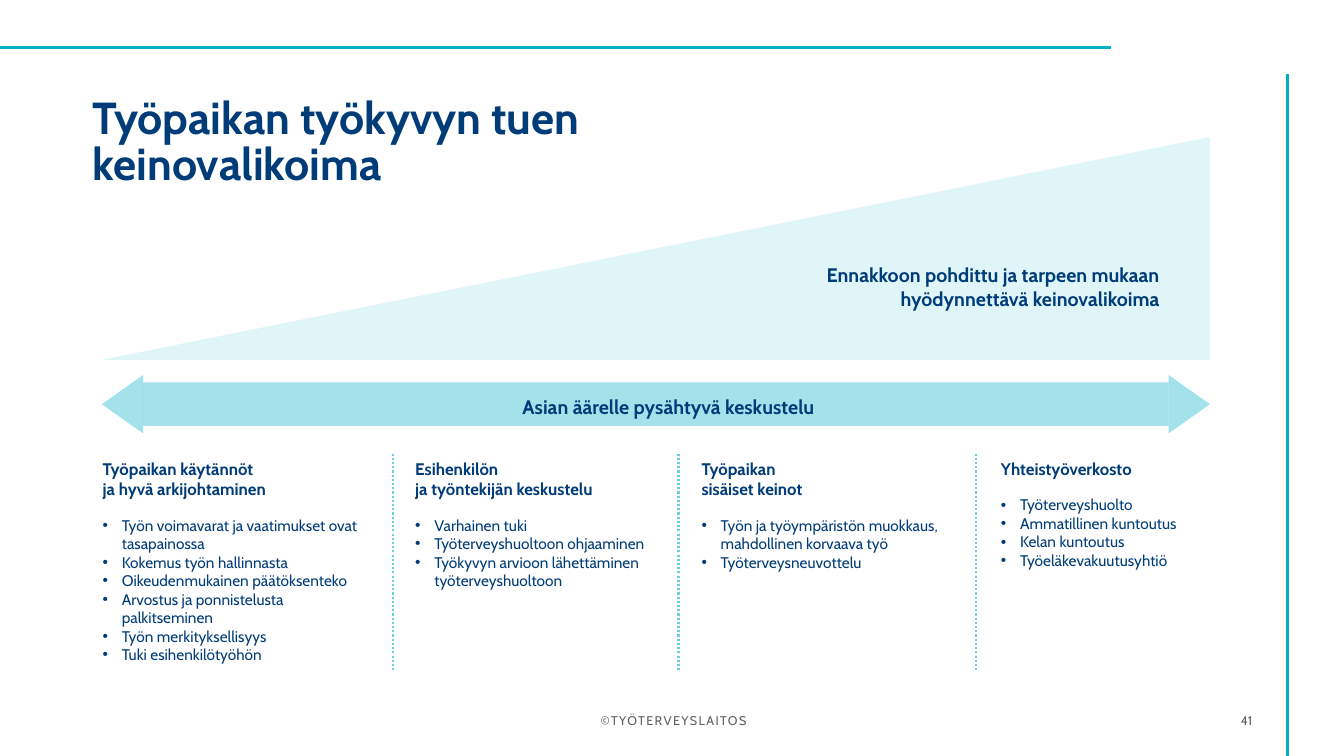
"""Build the slide on the range of means for supporting work ability."""
from copy import deepcopy

from lxml.etree import SubElement
from pptx import Presentation
from pptx.dml.color import RGBColor
from pptx.enum.dml import MSO_LINE
from pptx.enum.shapes import MSO_CONNECTOR, MSO_SHAPE
from pptx.enum.text import MSO_ANCHOR, MSO_AUTO_SIZE, PP_ALIGN
from pptx.oxml.ns import qn
from pptx.util import Inches, Pt

NAVY, TEAL, AQUA, GREY = "003C78", "00B0CA", "66D0DF", "606060"
LEFT, RIGHT = 1.01, 12.0
COLUMN_TOP, COLUMN_HEIGHT = 4.5, 2.15
HEAD_WIDTH, HEAD_HEIGHT = 0.41, 0.58
ARROW_MIDDLE, BAR_HEIGHT = 4.01, 0.43


def color(value):
    return RGBColor.from_string(value)


def write(para, text, size, ink=NAVY, bold=False, spacing=None):
    para.text = text
    for run in para.runs:
        formats = {"name": "Cabin", "size": Pt(size), "bold": bold}
        for name, value in formats.items():
            setattr(run.font, name, value)
        run.font.color.rgb = color(ink)
        if spacing:
            run.font._element.set("spc", str(spacing))
    for line_break in para._p.findall(qn("a:br")):
        line_break.append(deepcopy(para.runs[0].font._element))


deck = Presentation()
deck.slide_width, deck.slide_height = Inches(13.33), Inches(7.5)
page = deck.slides.add_slide(deck.slide_layouts[5])

title = page.shapes.title
title_formats = {"left": 0.92, "top": 1.03, "width": 11.26, "height": 0.85}
for name, value in title_formats.items():
    setattr(title, name, Inches(value))
frame_formats = {
    "margin_left": 0, "margin_right": 0, "margin_top": 0, "margin_bottom": 0,
    "vertical_anchor": MSO_ANCHOR.BOTTOM, "auto_size": MSO_AUTO_SIZE.NONE, "word_wrap": True,
}
for name, value in frame_formats.items():
    setattr(title.text_frame, name, value)
heading = title.text_frame.paragraphs[0]
heading.alignment = PP_ALIGN.LEFT
heading.line_spacing = 0.85
write(heading, "Työpaikan työkyvyn tuen\vkeinovalikoima", 32, bold=True)

arrow = page.shapes.add_group_shape()
head_left = (HEAD_HEIGHT - HEAD_WIDTH) / 2
head_top = ARROW_MIDDLE - HEAD_WIDTH / 2
bands = [
    (page.shapes, MSO_SHAPE.RIGHT_TRIANGLE, LEFT, 1.36, RIGHT - LEFT, 2.21, 0, 20),
    (arrow.shapes, MSO_SHAPE.RECTANGLE, LEFT + HEAD_WIDTH, ARROW_MIDDLE - BAR_HEIGHT / 2,
     RIGHT - LEFT - 2 * HEAD_WIDTH, BAR_HEIGHT, 0, 60),
    (arrow.shapes, MSO_SHAPE.ISOSCELES_TRIANGLE, LEFT - head_left, head_top,
     HEAD_HEIGHT, HEAD_WIDTH, 270, 60),
    (arrow.shapes, MSO_SHAPE.ISOSCELES_TRIANGLE, RIGHT - HEAD_WIDTH - head_left, head_top,
     HEAD_HEIGHT, HEAD_WIDTH, 90, 60),
]
for shapes, kind, left, top, width, height, turn, opacity in bands:
    band = shapes.add_shape(kind, Inches(left), Inches(top), Inches(width), Inches(height))
    band.shadow.inherit = False
    band.rotation = turn
    band.fill.solid()
    band.fill.fore_color.rgb = color(AQUA)
    band.line.fill.background()
    tint = band._element.spPr.find(qn("a:solidFill")).find(qn("a:srgbClr"))
    SubElement(tint, qn("a:alpha"), val=str(opacity * 1000))
    if kind == MSO_SHAPE.RIGHT_TRIANGLE:
        band._element.spPr.find(qn("a:xfrm")).set("flipH", "1")

rules = [(0, 0.47, 11.02, 0.47, TEAL, 1.85, None), (12.77, 7.5, 12.77, 0.73, TEAL, 1.85, None)]
for x in (3.9, 6.73, 9.68):
    rules.append((x, COLUMN_TOP, x, COLUMN_TOP + COLUMN_HEIGHT, AQUA, 1.5, MSO_LINE.ROUND_DOT))
for x1, y1, x2, y2, ink, weight, dash in rules:
    rule = page.shapes.add_connector(
        MSO_CONNECTOR.STRAIGHT, Inches(x1), Inches(y1), Inches(x2), Inches(y2))
    rule.line.color.rgb = color(ink)
    rule.line.width = Pt(weight)
    rule.line.dash_style = dash
    SubElement(rule._element.spPr, qn("a:effectLst"))

labels = [
    ("Ennakkoon pohdittu ja tarpeen mukaan hyödynnettävä keinovalikoima",
     7.61, 2.56, 3.99, 0.57, PP_ALIGN.RIGHT, 0.1, 14, NAVY, True, None),
    ("Asian äärelle pysähtyvä keskustelu",
     1.54, 3.86, 10.18, 0.34, PP_ALIGN.CENTER, 0.1, 14, NAVY, True, None),
    ("©TYÖTERVEYSLAITOS", 2.53, 6.95, 8.3, 0.4, PP_ALIGN.CENTER, 0.1, 9, GREY, False, 100),
    ("41", 11.19, 6.95, 1.23, 0.4, PP_ALIGN.RIGHT, 0, 9, GREY, False, None),
]
for text, left, top, width, height, align, margin, size, ink, bold, spacing in labels:
    box = page.shapes.add_textbox(Inches(left), Inches(top), Inches(width), Inches(height))
    frame = box.text_frame
    frame.word_wrap = True
    frame.vertical_anchor = MSO_ANCHOR.MIDDLE
    frame.margin_left = frame.margin_right = Inches(margin)
    frame.paragraphs[0].alignment = align
    write(frame.paragraphs[0], text, size, ink, bold, spacing)

columns = [
    (0.92, 2.87, "Työpaikan käytännöt\vja hyvä arkijohtaminen", [
        "Työn voimavarat ja vaatimukset ovat tasapainossa",
        "Kokemus työn hallinnasta",
        "Oikeudenmukainen päätöksenteko",
        "Arvostus ja ponnistelusta palkitseminen",
        "Työn merkityksellisyys",
        "Tuki esihenkilötyöhön"]),
    (4.02, 2.56, "Esihenkilön\vja työntekijän keskustelu", [
        "Varhainen tuki",
        "Työterveyshuoltoon ohjaaminen",
        "Työkyvyn arvioon lähettäminen työterveyshuoltoon"]),
    (6.86, 2.72, "Työpaikan\vsisäiset keinot", [
        "Työn ja työympäristön muokkaus, mahdollinen korvaava työ",
        "Työterveysneuvottelu"]),
    (9.83, 2.97, "Yhteistyöverkosto", [
        "Työterveyshuolto",
        "Ammatillinen kuntoutus",
        "Kelan kuntoutus",
        "Työeläkevakuutusyhtiö"]),
]
for left, width, topic, means in columns:
    box = page.shapes.add_textbox(
        Inches(left), Inches(COLUMN_TOP), Inches(width), Inches(COLUMN_HEIGHT))
    frame = box.text_frame
    frame.word_wrap = True
    write(frame.paragraphs[0], topic, 12, bold=True)
    for index, item in enumerate(means):
        para = frame.add_paragraph()
        para.space_before = Pt(0 if index else 12)
        properties = para._p.get_or_add_pPr()
        properties.set("marL", str(Inches(0.19)))
        properties.set("indent", str(-Inches(0.19)))
        SubElement(properties, qn("a:buFont"), typeface="Arial")
        SubElement(properties, qn("a:buChar"), char="•")
        write(para, item, 11)

deck.save("out.pptx")
